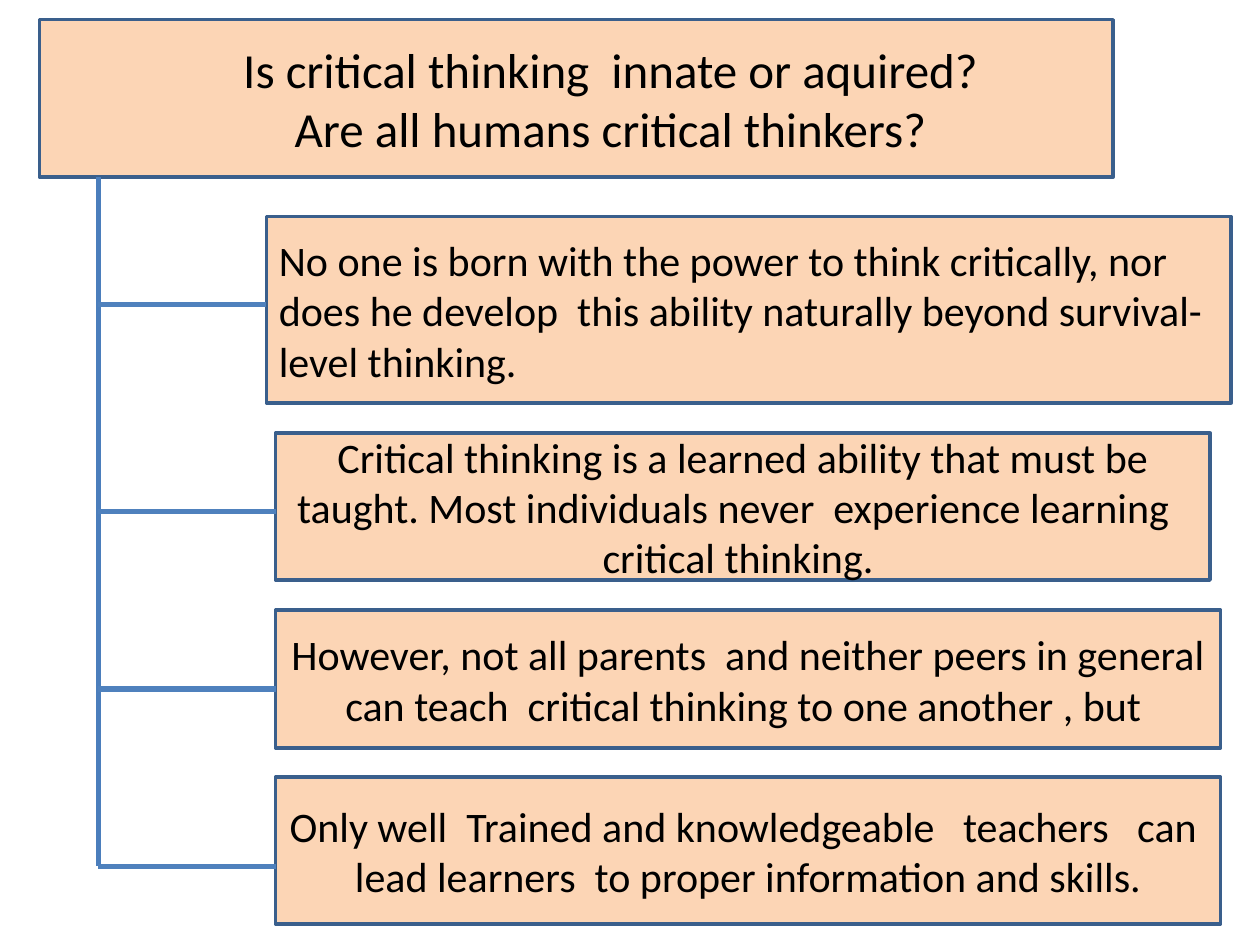
from lxml.etree import SubElement
from pptx import Presentation
from pptx.dml.color import RGBColor
from pptx.enum.shapes import MSO_CONNECTOR, MSO_SHAPE
from pptx.enum.text import MSO_ANCHOR, MSO_AUTO_SIZE, PP_ALIGN
from pptx.oxml.ns import qn
from pptx.util import Pt

PX = 9525
COLORS = {"fill": "FCD5B5", "border": "3A5F8C", "stem": "4B7EBC",
          "branch": "4F81BD", "text": "000000"}
TITLE_BOX = (30, 15, 818, 120)
TITLE_INDENT = 52
STEM_X = 75
TITLE = ["Is critical thinking  innate or aquired?", "Are all humans critical thinkers?"]
ANSWERS = [
    ((203, 165, 735, 142), 232, PP_ALIGN.LEFT,
     "No one is born with the power to think critically, nor does he develop  "
     "this ability naturally beyond survival-level thinking."),
    ((210, 330, 712, 112), 390, PP_ALIGN.CENTER,
     "Critical thinking is a learned ability that must be taught. Most individuals "
     "never  experience learning   critical thinking. "),
    ((210, 465, 720, 105), 525, PP_ALIGN.CENTER,
     "However, not all parents  and neither peers in general can teach  "
     "critical thinking to one another , but "),
    ((210, 592, 720, 112), 660, PP_ALIGN.CENTER,
     "Only well  Trained and knowledgeable   teachers   can  lead learners  "
     "to proper information and skills."),
]


def rgb(name):
    """Look up a palette colour."""
    return RGBColor.from_string(COLORS[name])


def write(tf, lines, size=24, align=PP_ALIGN.CENTER):
    """Fill a text frame with one formatted paragraph per line."""
    tf.word_wrap = True
    tf.auto_size = MSO_AUTO_SIZE.NONE
    tf.vertical_anchor = MSO_ANCHOR.MIDDLE
    for i, line in enumerate(lines):
        p = tf.paragraphs[0] if i == 0 else tf.add_paragraph()
        p.alignment = align
        r = p.add_run()
        r.text = line
        r.font.name = "Calibri"
        r.font.size = Pt(size)
        r.font.color.rgb = rgb("text")


def style_box(sp):
    """Give a box its flat fill and border."""
    sp.fill.solid()
    sp.fill.fore_color.rgb = rgb("fill")
    sp.line.color.rgb = rgb("border")
    sp.line.width = Pt(2)
    sp.shadow.inherit = False


def add_line(s, x1, y1, x2, y2, color):
    """Draw a straight line without a shadow."""
    line = s.shapes.add_connector(MSO_CONNECTOR.STRAIGHT, *(v * PX for v in (x1, y1, x2, y2)))
    line.line.color.rgb = rgb(color)
    line.line.width = Pt(3)
    SubElement(line._element.spPr, qn("a:effectLst"))


def add_title(s, box):
    """Place the question in the title placeholder."""
    sp = s.shapes.title
    sp.left, sp.top, sp.width, sp.height = (v * PX for v in box)
    style_box(sp)
    write(sp.text_frame, TITLE, size=28)
    sp.text_frame.paragraphs[0]._p.get_or_add_pPr().set("marL", str(TITLE_INDENT * PX))


def add_answer(s, box, branch_y, align, text):
    """Place one answer box and its branch from the stem."""
    sp = s.shapes.add_shape(MSO_SHAPE.RECTANGLE, *(v * PX for v in box))
    style_box(sp)
    write(sp.text_frame, [text], align=align)
    add_line(s, STEM_X, branch_y, box[0], branch_y, "branch")


def main():
    """Build the slide and save it."""
    prs = Presentation()
    prs.slide_width, prs.slide_height = 960 * PX, 720 * PX
    s = prs.slides.add_slide(prs.slide_layouts[5])
    add_title(s, TITLE_BOX)
    add_line(s, STEM_X, TITLE_BOX[1] + TITLE_BOX[3], STEM_X, ANSWERS[-1][1], "stem")
    for answer in ANSWERS:
        add_answer(s, *answer)
    prs.save("out.pptx")


if __name__ == "__main__":
    main()
